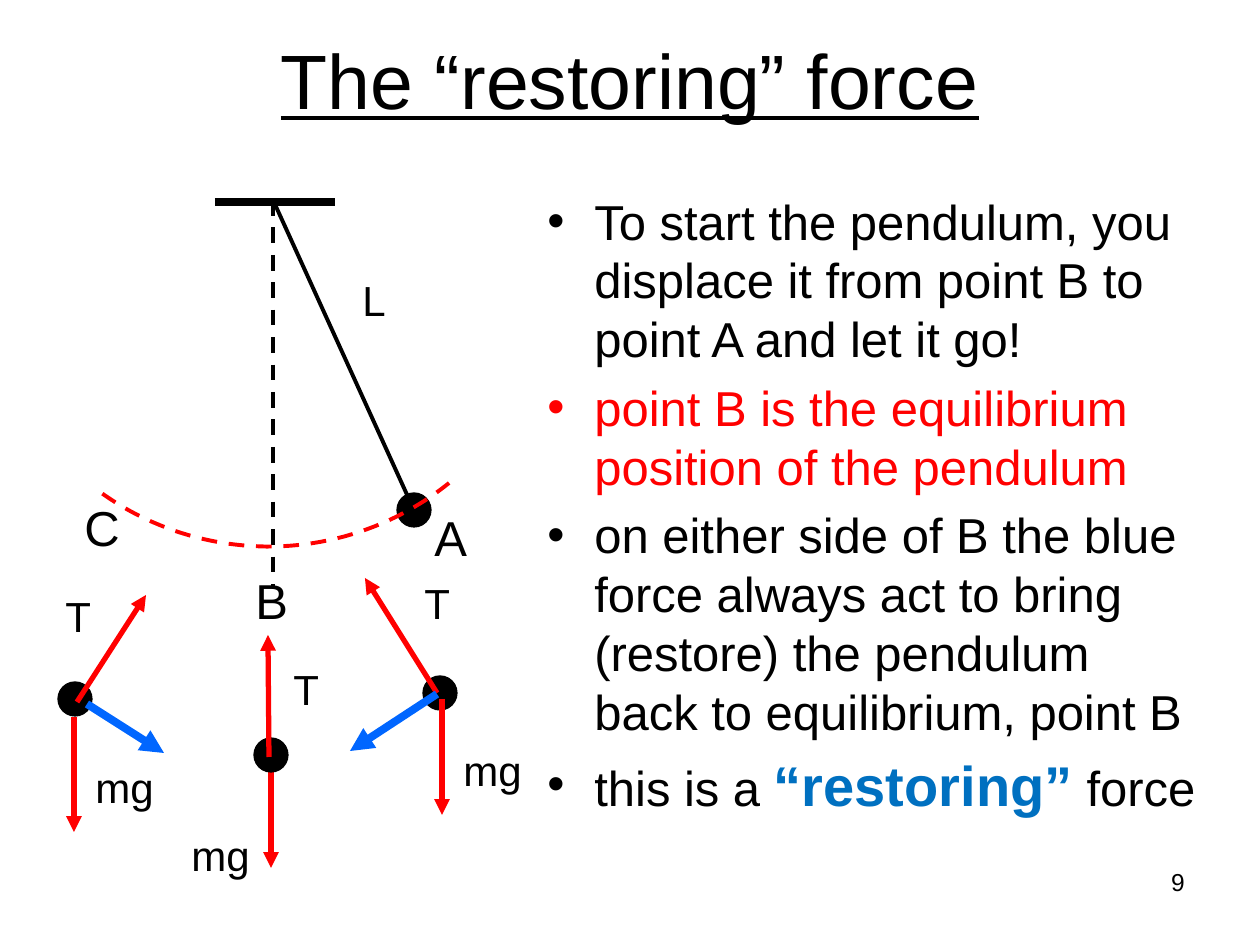
import math
from dataclasses import dataclass

import lxml.etree
import pptx
import pptx.dml.color
import pptx.enum.dml
import pptx.enum.shapes
import pptx.enum.text
import pptx.oxml.ns
import pptx.util

EMU_PER_PX = 914400 / 126
BOB_SIZE = 34


@dataclass(frozen=True)
class Theme:
    font: str = "Arial"
    white: str = "FFFFFF"
    black: str = "000000"
    red: str = "FF0000"
    blue: str = "0066FF"
    emphasis: str = "0070C0"
    title_size: int = 44
    emphasis_size: int = 32
    body_size: int = 28
    label_size: int = 24
    number_size: int = 14
    support_width: float = 4.5
    force_width: float = 3
    string_width: float = 2.25
    outline_width: float = 0.75


THEME = Theme()
ALIGN = pptx.enum.text.PP_ALIGN
DASH = pptx.enum.dml.MSO_LINE.DASH


def px(length):
    return pptx.util.Emu(round(length * EMU_PER_PX))


def rgb(color):
    return pptx.dml.color.RGBColor.from_string(color)


def add_element(parent, tag, **attributes):
    return lxml.etree.SubElement(parent, pptx.oxml.ns.qn(tag), attributes)


def format_run(run, size, color=THEME.black, bold=False):
    run.font.name = THEME.font
    run.font.size = pptx.util.Pt(size)
    run.font.color.rgb = rgb(color)
    run.font.bold = bold


def format_line(line, color, width, dash=None):
    line.color.rgb = rgb(color)
    line.width = pptx.util.Pt(width)
    if dash is not None:
        line.dash_style = dash


def add_text(slide, text, left, top, width, height, size, align=ALIGN.LEFT, wrap=True):
    shape = slide.shapes.add_textbox(px(left), px(top), px(width), px(height))
    shape.text_frame.text = text
    shape.text_frame.word_wrap = wrap
    paragraph = shape.text_frame.paragraphs[0]
    paragraph.alignment = align
    format_run(paragraph.runs[0], size)
    return shape


def add_label(slide, text, left, top, width, height, size):
    shape = add_text(slide, text, left, top, width, height, size, wrap=False)
    shape.text_frame.auto_size = pptx.enum.text.MSO_AUTO_SIZE.SHAPE_TO_FIT_TEXT


def add_title(slide):
    shape = add_text(slide, "The “restoring” force", 0, 0, 1260, 158,
                     THEME.title_size, ALIGN.CENTER)
    shape.fill.solid()
    shape.fill.fore_color.rgb = rgb(THEME.white)
    shape.text_frame.vertical_anchor = pptx.enum.text.MSO_ANCHOR.MIDDLE
    shape.text_frame.paragraphs[0].runs[0].font.underline = True


def format_bullet(paragraph):
    paragraph.space_before = pptx.util.Pt(THEME.body_size * 0.2)
    properties = paragraph._p.get_or_add_pPr()
    properties.set("marL", str(px(47)))
    properties.set("indent", str(px(-47)))
    add_element(properties, "a:buFont", typeface=THEME.font)
    add_element(properties, "a:buChar", char="•")


def add_body(slide):
    size = THEME.body_size
    paragraphs = [
        [("To start the pendulum, you displace it from point B to point A "
          "and let it go!", size, THEME.black, False)],
        [("point B is the equilibrium position of the pendulum",
          size, THEME.red, False)],
        [("on either side of B the blue force always act to bring (restore) "
          "the pendulum back to equilibrium, point B", size, THEME.black, False)],
        [("this is a ", size, THEME.black, False),
         ("“restoring”", THEME.emphasis_size, THEME.emphasis, True),
         (" force", size, THEME.black, False)],
    ]
    shape = slide.shapes.add_textbox(px(535), px(185), px(677), px(670))
    text_frame = shape.text_frame
    text_frame.word_wrap = True
    for index, runs in enumerate(paragraphs):
        paragraph = text_frame.add_paragraph() if index else text_frame.paragraphs[0]
        format_bullet(paragraph)
        for text, *style in runs:
            run = paragraph.add_run()
            run.text = text
            format_run(run, *style)


def add_line(slide, start, end, color, width, dash=None):
    connector = slide.shapes.add_connector(
        pptx.enum.shapes.MSO_CONNECTOR.STRAIGHT, *map(px, start + end))
    format_line(connector.line, color, width, dash)
    add_element(connector._element.spPr, "a:effectLst")
    return connector


def add_arrow(slide, start, end, color, width):
    connector = add_line(slide, start, end, color, width)
    add_element(connector.line._get_or_add_ln(), "a:tailEnd", type="triangle")


def add_bob(slide, left, top):
    shape = slide.shapes.add_shape(
        pptx.enum.shapes.MSO_SHAPE.OVAL, px(left), px(top), px(BOB_SIZE), px(BOB_SIZE))
    shape.shadow.inherit = False
    shape.fill.solid()
    shape.fill.fore_color.rgb = rgb(THEME.black)
    format_line(shape.line, THEME.black, THEME.outline_width)


def add_swing_path(slide, center, radius, first_angle, last_angle, rotation, steps=48):
    angles = [math.radians(first_angle + (last_angle - first_angle) * step / steps)
              for step in range(steps + 1)]
    points = [(px(center[0] + radius * math.cos(angle)),
               px(center[1] + radius * math.sin(angle))) for angle in angles]
    builder = slide.shapes.build_freeform(*map(px, center))
    builder.move_to(*points[0])
    builder.add_line_segments(points[1:], close=False)
    shape = builder.convert_to_shape()
    shape.rotation = rotation
    shape.shadow.inherit = False
    shape.fill.background()
    format_line(shape.line, THEME.red, THEME.string_width, DASH)


def add_pendulum(slide):
    pivot = (273, 200)
    add_line(slide, (215, 202), (335, 202), THEME.black, THEME.support_width)
    add_line(slide, pivot, (273, 588), THEME.black, THEME.string_width, DASH)
    add_line(slide, pivot, (414, 510), THEME.black, THEME.string_width)
    add_bob(slide, 397, 493)
    add_swing_path(slide, (111, 602), 288, -90, -14.7, 141.2)
    for text, left, top in (("A", 422, 501), ("B", 243, 564), ("C", 72, 491)):
        add_label(slide, text, left, top, 58, 72, THEME.body_size)
    add_label(slide, "L", 350, 268, 49, 63, THEME.label_size)


def add_forces(slide, bob, weight, tension, restoring, weight_label, tension_label):
    if restoring:
        add_bob(slide, *bob)
    add_arrow(slide, *weight, THEME.red, THEME.force_width)
    if not restoring:
        add_bob(slide, *bob)
    add_arrow(slide, *tension, THEME.red, THEME.force_width)
    if restoring:
        add_arrow(slide, *restoring, THEME.blue, THEME.support_width)
    add_label(slide, "mg", *weight_label, 85, 63, THEME.label_size)
    add_label(slide, "T", *tension_label, 50, 63, THEME.label_size)


def main():
    presentation = pptx.Presentation()
    presentation.slide_width = px(1260)
    presentation.slide_height = px(945)
    slide = presentation.slides.add_slide(presentation.slide_layouts[6])
    add_title(slide)
    add_body(slide)
    add_pendulum(slide)
    add_forces(slide, (423, 676), ((442, 699), (442, 815)), ((437, 693), (365, 578)),
               ((437, 694), (350, 751)), (451, 738), (412, 571))
    add_forces(slide, (58, 682), ((74, 717), (74, 832)), ((77, 702), (146, 595)),
               ((87, 704), (164, 753)), (83, 755), (53, 584))
    add_forces(slide, (254, 738), ((271, 752), (271, 868)), ((269, 757), (268, 635)),
               None, (179, 823), (281, 657))
    add_text(slide, "9", 903, 861, 294, 66, THEME.number_size, ALIGN.RIGHT)
    presentation.save("out.pptx")


if __name__ == "__main__":
    main()
